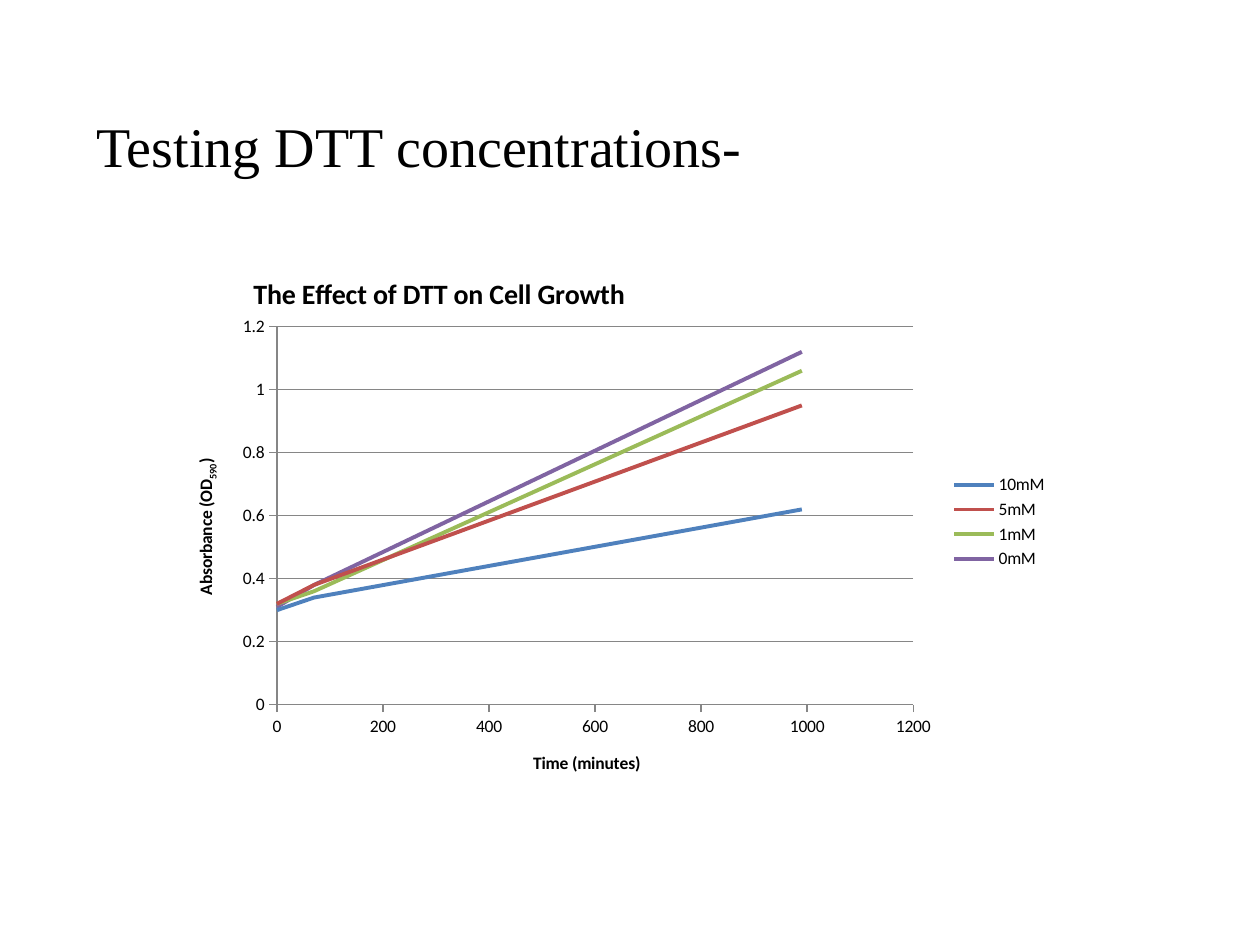
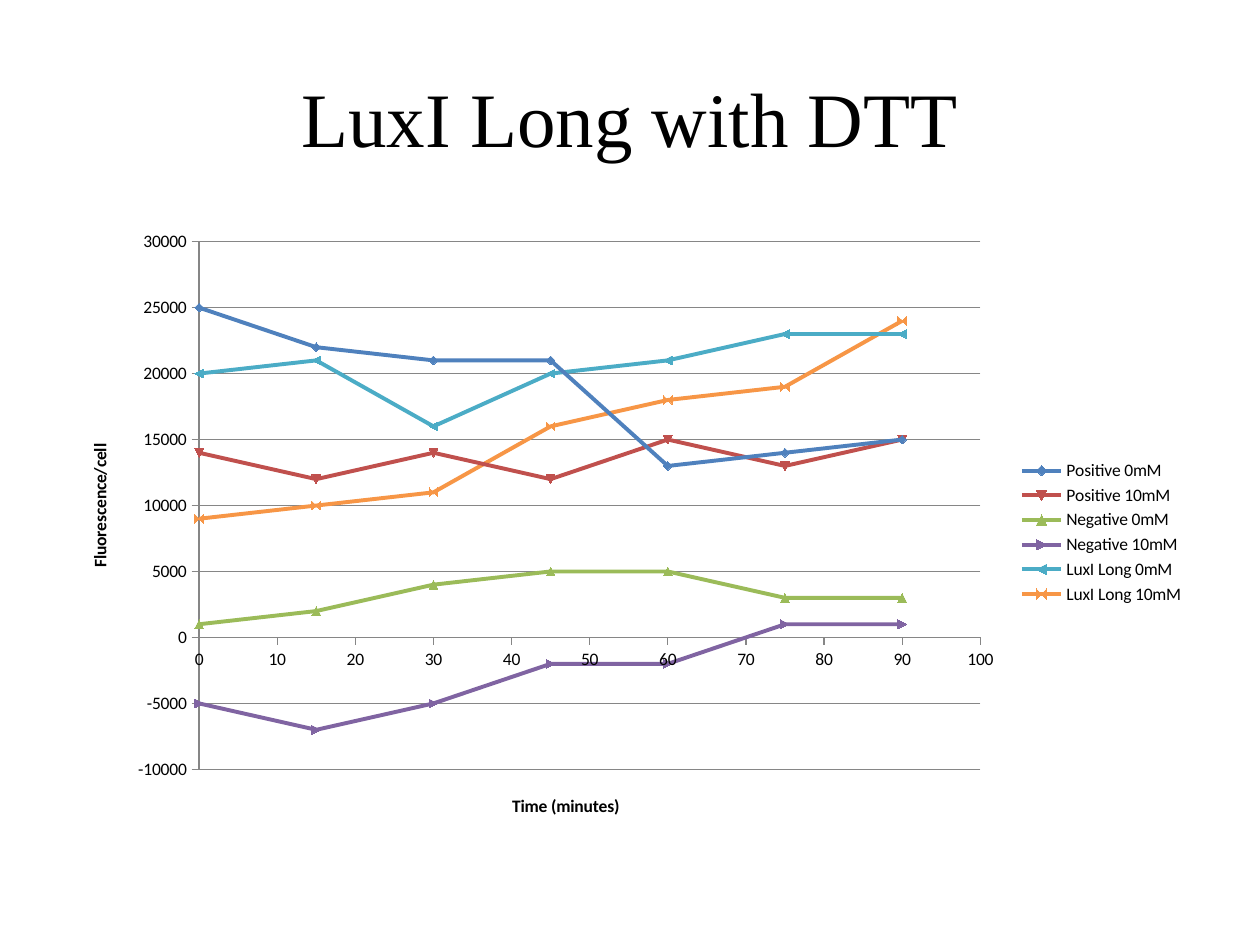
from pptx import Presentation
from pptx.chart.data import XyChartData
from pptx.dml.color import RGBColor
from pptx.enum.chart import XL_CHART_TYPE, XL_LEGEND_POSITION, XL_TICK_MARK
from pptx.enum.text import MSO_ANCHOR, PP_ALIGN
from pptx.oxml import parse_xml
from pptx.oxml.ns import nsdecls
from pptx.util import Pt

SERIF, SANS = "Times New Roman", "Calibri"
BLACK, GREY = "000000", "868686"
HUES = ["4F81BD", "C0504D", "9BBB59", "8064A2", "4BACC6", "F79646"]

GROWTH = {
    "kind": XL_CHART_TYPE.XY_SCATTER_SMOOTH_NO_MARKERS,
    "box": (96, 138, 510, 320.5),
    "plot": (0.122, 0.152, 0.713, 0.674),
    "title": "The Effect of DTT on Cell Growth",
    "axes": [
        (["Time (minutes)"], 0, 1200, 200),
        (["Absorbance (OD", "590", ")"], 0, 1.2, 0.2),
    ],
    "times": [0, 70, 990],
    "series": {
        "10mM": [0.3, 0.34, 0.62],
        "5mM": [0.32, 0.38, 0.95],
        "1mM": [0.32, 0.36, 1.06],
        "0mM": [0.31, 0.38, 1.12],
    },
}
LIGHT = {
    "kind": XL_CHART_TYPE.XY_SCATTER_LINES,
    "box": (36, 126, 648, 356.5),
    "plot": (0.12, 0.034, 0.689, 0.846),
    "title": None,
    "axes": [
        (["Time (minutes)"], 0, 100, 10),
        (["Fluorescence/cell"], -10000, 30000, 5000),
    ],
    "times": range(0, 91, 15),
    "series": {
        "Positive 0mM": [25000, 22000, 21000, 21000, 13000, 14000, 15000],
        "Positive 10mM": [14000, 12000, 14000, 12000, 15000, 13000, 15000],
        "Negative 0mM": [1000, 2000, 4000, 5000, 5000, 3000, 3000],
        "Negative 10mM": [-5000, -7000, -5000, -2000, -2000, 1000, 1000],
        "LuxI Long 0mM": [20000, 21000, 16000, 20000, 21000, 23000, 23000],
        "LuxI Long 10mM": [9000, 10000, 11000, 16000, 18000, 19000, 24000],
    },
}


def color(code):
    return RGBColor.from_string(code)


def style(font, size, face=SANS, bold=False):
    font.size, font.name, font.bold = Pt(size), face, bold
    font.color.rgb = color(BLACK)


def stroke(line, code, width):
    line.color.rgb = color(code)
    line.width = Pt(width)


def layout(**parts):
    """Return a manual chart layout with the given fields."""
    tags = "".join(f'<c:{key} val="{val}"/>' for key, val in parts.items())
    return parse_xml(f"<c:layout {nsdecls('c')}><c:manualLayout>{tags}"
                     "</c:manualLayout></c:layout>")


def put_layout(parent, new, after=None):
    """Replace the layout of a chart part, or put it after a given child."""
    for old in parent.findall(new.tag):
        parent.remove(old)
    if after is None:
        parent.insert(0, new)
    else:
        after.addnext(new)


def set_words(frame, words, size):
    """Write the pieces as runs; every second piece is a subscript."""
    para = frame.paragraphs[0]
    for place, word in enumerate(words):
        run = para.add_run()
        run.text = word
        style(run.font, size, bold=True)
        if place % 2:
            run.font._element.set("baseline", "-25000")


def set_axis(axis, words, low, high, step):
    axis.minimum_scale, axis.maximum_scale, axis.major_unit = low, high, step
    axis.major_tick_mark = XL_TICK_MARK.OUTSIDE
    axis.minor_tick_mark = XL_TICK_MARK.NONE
    axis.tick_labels.number_format = "General"
    axis.tick_labels.number_format_is_linked = False
    stroke(axis.format.line, GREY, 0.75)
    style(axis.tick_labels.font, 10)
    set_words(axis.axis_title.text_frame, words, 10)


def add_graph(slide, info):
    data = XyChartData()
    for name, values in info["series"].items():
        row = data.add_series(name)
        for time, value in zip(info["times"], values):
            row.add_data_point(time, value)
    box = [Pt(length) for length in info["box"]]
    chart = slide.shapes.add_chart(info["kind"], *box, data).chart
    style(chart.font, 10)

    chart.has_title = bool(info["title"])
    if info["title"]:
        title = chart.chart_title
        set_words(title.text_frame, [info["title"]], 16)
        put_layout(title._element, layout(xMode="edge", yMode="edge", x=0.09, y=0.05),
                   title._element.find("{*}tx"))
    x, y, w, h = info["plot"]
    put_layout(chart._chartSpace.chart.plotArea,
               layout(layoutTarget="inner", xMode="edge", yMode="edge", x=x, y=y, w=w, h=h))

    across, up = chart.category_axis, chart.value_axis
    for axis, spec in zip((across, up), info["axes"]):
        set_axis(axis, *spec)
    across.has_major_gridlines = False
    up.has_major_gridlines = True
    stroke(up.major_gridlines.format.line, GREY, 0.75)

    chart.has_legend = True
    chart.legend.position = XL_LEGEND_POSITION.RIGHT
    chart.legend.include_in_layout = False
    style(chart.legend.font, 10)

    plot = chart.plots[0]
    plot.vary_by_categories = False
    for row, hue in zip(plot.series, HUES):
        stroke(row.format.line, hue, 2.25)
        row.smooth = info["kind"] == XL_CHART_TYPE.XY_SCATTER_SMOOTH_NO_MARKERS


def set_text(shape, text, size, box, align, anchor):
    shape.left, shape.top, shape.width, shape.height = map(Pt, box)
    frame = shape.text_frame
    frame.text = text
    frame.vertical_anchor = anchor
    para = frame.paragraphs[0]
    para.alignment = align
    style(para.runs[0].font, size, SERIF)
    return para


def main():
    deck = Presentation()
    deck.slide_width, deck.slide_height = Pt(720), Pt(540)

    slide = deck.slides.add_slide(deck.slide_layouts[1])
    title, body = slide.placeholders
    title._element.getparent().remove(title._element)
    para = set_text(body, "Testing DTT concentrations-", 32, (48, 60, 488, 284),
                    PP_ALIGN.LEFT, MSO_ANCHOR.TOP)
    props = para._p.get_or_add_pPr()
    props.set("marL", "0")
    props.set("indent", "0")
    props.append(parse_xml(f"<a:buNone {nsdecls('a')}/>"))
    add_graph(slide, GROWTH)

    slide = deck.slides.add_slide(deck.slide_layouts[5])
    set_text(slide.shapes.title, "LuxI Long with DTT", 44, (36, 21.6, 648, 90),
             PP_ALIGN.CENTER, MSO_ANCHOR.MIDDLE)
    add_graph(slide, LIGHT)

    deck.save("out.pptx")


if __name__ == "__main__":
    main()
